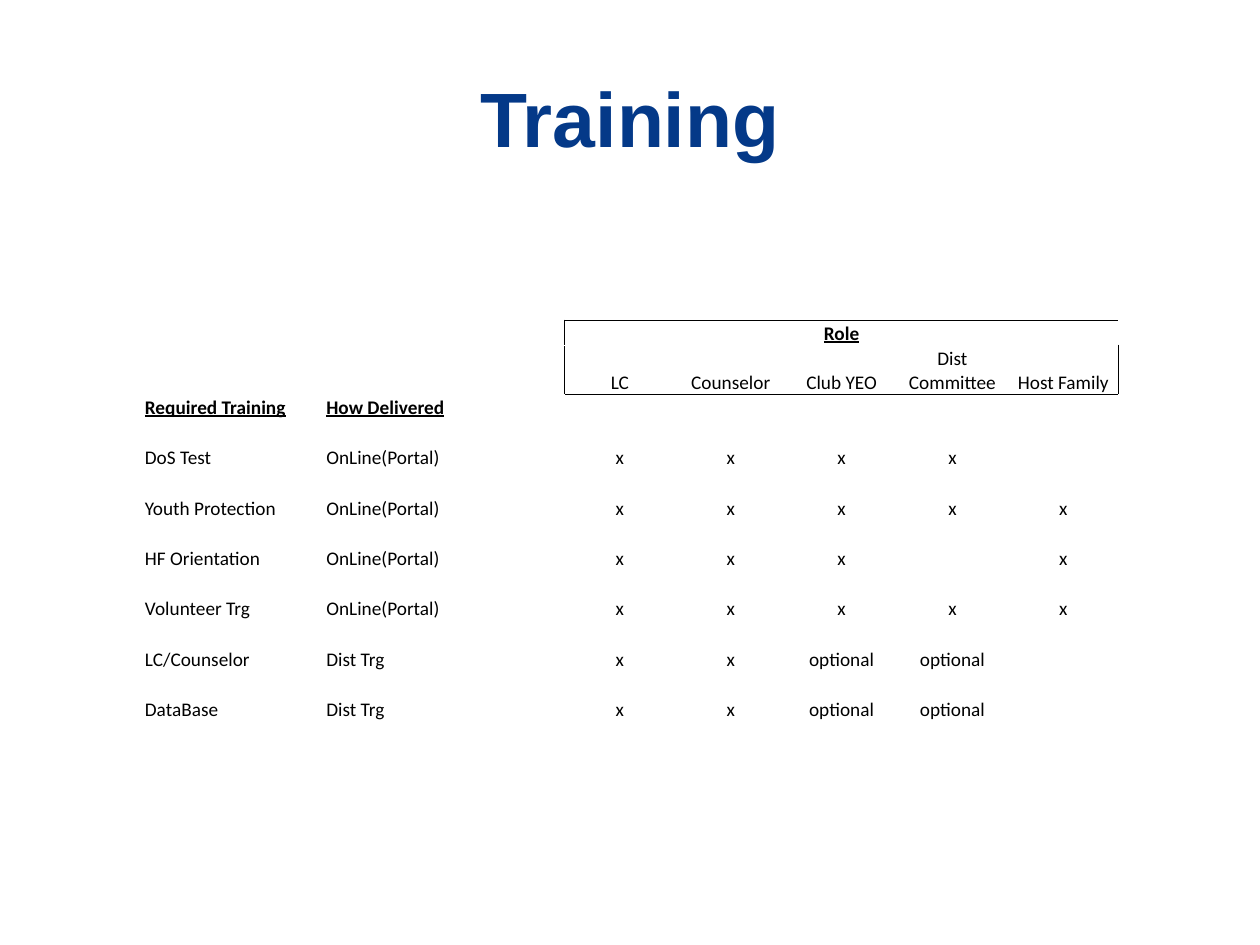
from dataclasses import dataclass

from lxml import etree
from pptx import Presentation
from pptx import util as u
from pptx.dml.color import RGBColor
from pptx.enum import text
from pptx.oxml import ns


@dataclass(frozen=True)
class Theme:
    title_font: str = "Arial"
    table_font: str = "Calibri"
    title_size: int = 44
    table_size: int = 11
    border_width: float = 0.5
    title_color: str = "043988"
    ink: str = "000000"


ROLES = ["LC", "Counselor", "Club YEO", "Dist Committee", "Host Family"]
ONLINE = "OnLine(Portal)"
DISTRICT = "Dist Trg"
TRAININGS = [
    ("DoS Test", ONLINE, ["x", "x", "x", "x", ""]),
    ("Youth Protection", ONLINE, ["x"] * 5),
    ("HF Orientation", ONLINE, ["x", "x", "x", "", "x"]),
    ("Volunteer Trg", ONLINE, ["x"] * 5),
    ("LC/Counselor", DISTRICT, ["x", "x", "optional", "optional", ""]),
    ("DataBase", DISTRICT, ["x", "x", "optional", "optional", ""]),
]
COLUMN_WIDTHS = [1.44, 1.33, 0.57] + [0.88] * len(ROLES)
ROW_HEIGHT = 0.2
FIRST_ROLE, LAST_ROLE = 3, 7
ROLE_ROW, ROLE_NAMES_ROW, HEADING_ROW = 0, 1, 2


class SlideBuilder:
    def __init__(self, presentation, theme):
        self.theme = theme
        self.slide = presentation.slides.add_slide(presentation.slide_layouts[5])

    def style(self, paragraph, font, size, color, bold=False, underline=False):
        paragraph.font.name = font
        paragraph.font.size = u.Pt(size)
        paragraph.font.color.rgb = RGBColor.from_string(color)
        paragraph.font.bold = bold
        paragraph.font.underline = underline

    def title(self, words, left, top, width, height):
        shape = self.slide.shapes.title
        shape.left, shape.top = u.Inches(left), u.Inches(top)
        shape.width, shape.height = u.Inches(width), u.Inches(height)
        frame = shape.text_frame
        frame.text = words
        frame.vertical_anchor = text.MSO_ANCHOR.MIDDLE
        paragraph = frame.paragraphs[0]
        paragraph.alignment = text.PP_ALIGN.CENTER
        self.style(paragraph, self.theme.title_font, self.theme.title_size,
                   self.theme.title_color, bold=True)

    def table(self, rows, left, top, widths, heights):
        shape = self.slide.shapes.add_table(
            len(rows), len(widths), u.Inches(left), u.Inches(top),
            u.Inches(sum(widths)), u.Inches(sum(heights)))
        table = shape.table
        table.first_row = table.horz_banding = False
        for column, width in zip(table.columns, widths):
            column.width = u.Inches(width)
        for row, height in zip(table.rows, heights):
            row.height = u.Inches(height)
        for row_index, values in enumerate(rows):
            for column_index, value in enumerate(values):
                self.cell(table.cell(row_index, column_index), value,
                          centered=column_index >= FIRST_ROLE,
                          heading=row_index in (ROLE_ROW, HEADING_ROW))
        return table

    def cell(self, cell, value, centered, heading):
        cell.text = value
        cell.fill.background()
        cell.vertical_anchor = text.MSO_ANCHOR.BOTTOM
        cell.margin_left = cell.margin_right = cell.margin_top = u.Inches(0.01)
        cell.margin_bottom = 0
        paragraph = cell.text_frame.paragraphs[0]
        paragraph.alignment = text.PP_ALIGN.CENTER if centered else text.PP_ALIGN.LEFT
        self.style(paragraph, self.theme.table_font, self.theme.table_size,
                   self.theme.ink, bold=heading, underline=heading)

    def borders(self, cell, sides):
        """Draw the given sides, a subset of "LRTB" in that order."""
        properties = cell._tc.get_or_add_tcPr()
        for index, side in enumerate(sides):
            line = etree.Element(ns.qn(f"a:ln{side}"),
                                 w=str(u.Pt(self.theme.border_width)))
            fill = etree.SubElement(line, ns.qn("a:solidFill"))
            etree.SubElement(fill, ns.qn("a:srgbClr"), val=self.theme.ink)
            properties.insert(index, line)

    def box(self, table, top, bottom, left, right):
        """Outline a block of cells, also on the neighbours' shared edges."""
        for row in range(top, bottom + 2):
            for column in range(left - 1, right + 1):
                inside_rows = row <= bottom
                inside_columns = column >= left
                edges = {
                    "L": inside_rows and column == left,
                    "R": inside_rows and column in (left - 1, right),
                    "T": inside_columns and row in (top, bottom + 1),
                    "B": inside_columns and row == bottom,
                }
                self.borders(table.cell(row, column),
                             [side for side, drawn in edges.items() if drawn])


def training_rows():
    empty = [""] * len(COLUMN_WIDTHS)
    rows = [
        ["", "", "", "Role", "", "", "", ""],
        ["", "", "", *ROLES],
        ["Required Training", "How Delivered"] + [""] * 6,
        empty,
    ]
    for name, delivery, marks in TRAININGS:
        rows += [[name, delivery, "", *marks], empty]
    return rows


def main():
    presentation = Presentation()
    presentation.slide_width, presentation.slide_height = u.Inches(10), u.Inches(7.5)
    builder = SlideBuilder(presentation, Theme())
    builder.title("Training", 0.5, 0.3, 9, 1.25)

    rows = training_rows()
    heights = [ROW_HEIGHT] * len(rows)
    heights[ROLE_NAMES_ROW] = 0.39
    table = builder.table(rows, 1.14, 2.54, COLUMN_WIDTHS, heights)
    table.cell(ROLE_ROW, FIRST_ROLE).merge(table.cell(ROLE_ROW, LAST_ROLE))
    builder.box(table, ROLE_ROW, ROLE_NAMES_ROW, FIRST_ROLE, LAST_ROLE)
    presentation.save("out.pptx")


if __name__ == "__main__":
    main()
